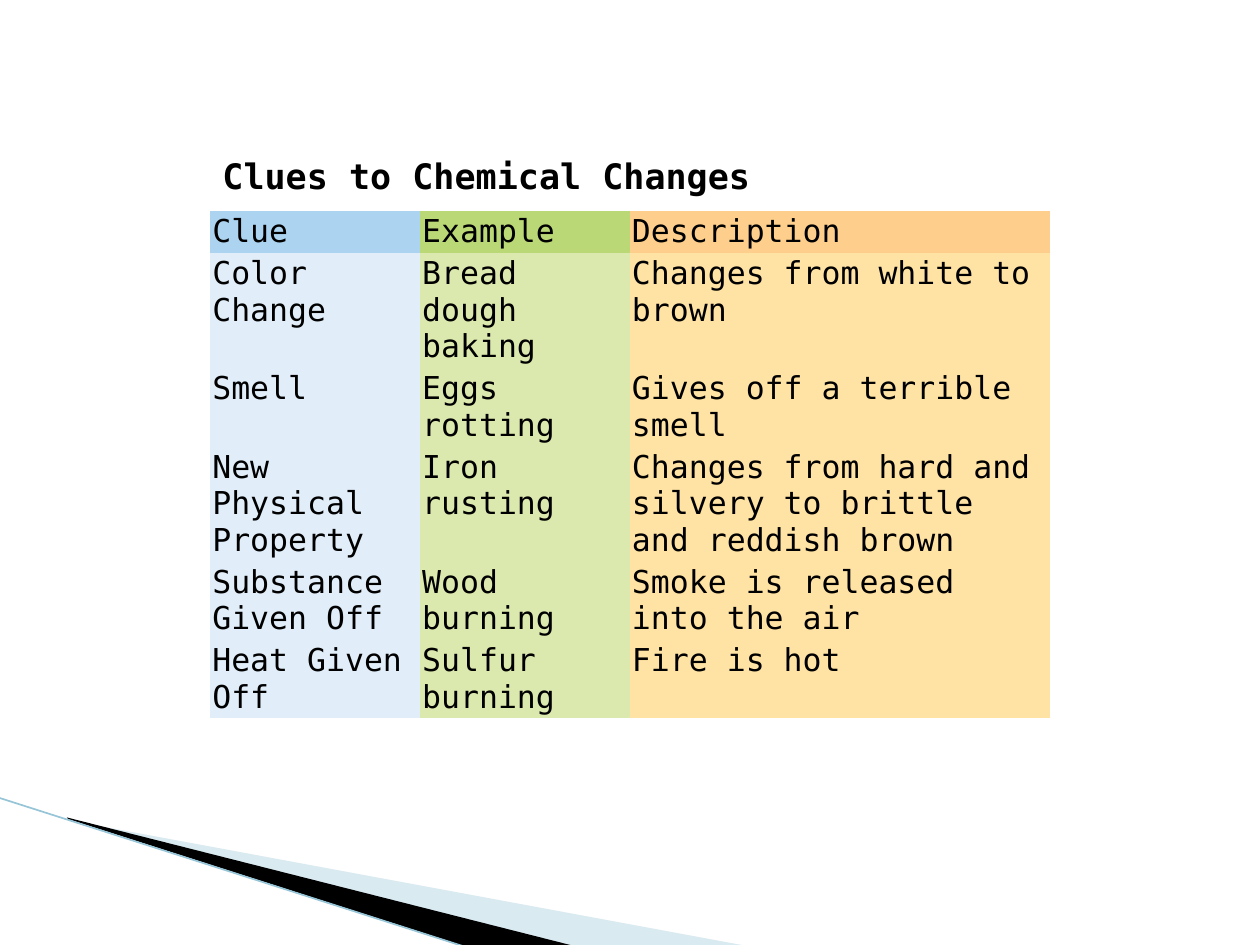
from pptx import Presentation
from pptx.dml.color import RGBColor
from pptx.enum.text import MSO_ANCHOR, PP_ALIGN
from pptx.oxml.ns import qn
from pptx.util import Cm, Pt
from lxml import etree

LEFT = PP_ALIGN.LEFT
MIDDLE = MSO_ANCHOR.MIDDLE
TOP = MSO_ANCHOR.TOP
FONT = "DejaVu Sans Mono"

COLORS = {
    "text": "000000",
    "wedge": "000000",
    "pale_wedge": "A0CBDC",
    "edge": "97C5D8",
}
HEADER_FILLS = ["ACD4F1", "BBD876", "FECF8C"]
BODY_FILLS = ["E1EEF9", "DCE9AE", "FFE3A5"]

COLUMN_WIDTHS = [4.23, 4.23, 8.47]
LINE_HEIGHT = 0.74
CELL_MARGIN = 0.05

# Number of text lines in the tallest cell, then the cells
ROWS = [
    (1, ["Clue", "Example", "Description"]),
    (3, ["Color Change", "Bread dough baking", "Changes from white to brown"]),
    (2, ["Smell", "Eggs rotting", "Gives off a terrible smell"]),
    (3, ["New Physical Property", "Iron rusting",
         "Changes from hard and silvery to brittle and reddish brown"]),
    (2, ["Substance Given Off", "Wood burning", "Smoke is released into the air"]),
    (2, ["Heat Given Off", "Sulfur burning", "Fire is hot"]),
]


def rgb(name):
    return RGBColor.from_string(COLORS[name])


def set_attributes(target, values):
    for name, value in values.items():
        setattr(target, name, value)


def write_text(text_frame, text, size, bold=False):
    text_frame.text = text
    paragraph = text_frame.paragraphs[0]
    paragraph.alignment = LEFT
    font = paragraph.runs[0].font
    set_attributes(font, {"name": FONT, "size": Pt(size), "bold": bold})
    font.color.rgb = rgb("text")


def add_wedge(slide, points, color, opacity=None):
    """Add a filled polygon; points are in centimetres, opacity in percent."""
    start, *others = [(Cm(x), Cm(y)) for x, y in points]
    builder = slide.shapes.build_freeform(*start)
    builder.add_line_segments(others, close=True)
    shape = builder.convert_to_shape()
    shape.shadow.inherit = False
    shape.line.fill.background()
    shape.fill.solid()
    shape.fill.fore_color.rgb = rgb(color)
    if opacity is not None:
        fill_color = shape.fill._xPr.find(qn("a:solidFill"))[0]
        etree.SubElement(fill_color, qn("a:alpha"), val=str(opacity * 1000))


def add_line(slide, start, end, color, width):
    ends = [Cm(value) for value in (*start, *end)]
    connector = slide.shapes.add_connector(1, *ends)
    connector.line.color.rgb = rgb(color)
    connector.line.width = Pt(width)
    etree.SubElement(connector._element.spPr, qn("a:effectLst"))


def format_title(slide, text):
    title = slide.shapes.title
    set_attributes(title, {"left": Cm(4.23), "top": Cm(2.98),
                           "width": Cm(17.15), "height": Cm(1.11)})
    set_attributes(title.text_frame, {"word_wrap": True, "vertical_anchor": MIDDLE})
    write_text(title.text_frame, text, 20, bold=True)


def add_clue_table(slide):
    heights = [lines * LINE_HEIGHT + 2 * CELL_MARGIN for lines, _ in ROWS]
    frame = slide.shapes.add_table(
        len(ROWS), len(COLUMN_WIDTHS), Cm(4.23), Cm(4.26),
        Cm(sum(COLUMN_WIDTHS)), Cm(sum(heights)))
    table = frame.table
    table.horz_banding = False
    table.first_row = False
    # "No Style, No Grid": the cells carry only their own fills
    table._tbl.tblPr.find(qn("a:tableStyleId")).text = (
        "{2D5ABB26-0587-4C30-8999-92F81FD0307C}")
    for column, width in zip(table.columns, COLUMN_WIDTHS):
        column.width = Cm(width)

    margin = Cm(CELL_MARGIN)
    cell_format = {"margin_left": margin, "margin_right": margin,
                   "margin_top": margin, "margin_bottom": margin,
                   "vertical_anchor": TOP}
    for row_index, (_, texts) in enumerate(ROWS):
        table.rows[row_index].height = Cm(heights[row_index])
        fills = BODY_FILLS if row_index else HEADER_FILLS
        for column_index, (text, fill) in enumerate(zip(texts, fills)):
            cell = table.cell(row_index, column_index)
            set_attributes(cell, cell_format)
            cell.fill.solid()
            cell.fill.fore_color.rgb = RGBColor.from_string(fill)
            write_text(cell.text_frame, text, 18)


def main():
    presentation = Presentation()
    presentation.slide_width = Cm(25.4)
    presentation.slide_height = Cm(19.05)
    slide = presentation.slides.add_slide(presentation.slide_layouts[5])

    add_wedge(slide, [(1.4, 16.54), (15.11, 19.08), (11.58, 19.08), (1.4, 16.51)],
              "pale_wedge", opacity=40)
    add_wedge(slide, [(1.35, 16.48), (11.61, 19.08), (9.45, 19.1), (1.37, 16.51)],
              "wedge")
    add_line(slide, (-0.03, 16.08), (9.42, 19.1), "edge", 0.95)
    add_clue_table(slide)
    format_title(slide, "Clues to Chemical Changes")

    presentation.save("out.pptx")


if __name__ == "__main__":
    main()
